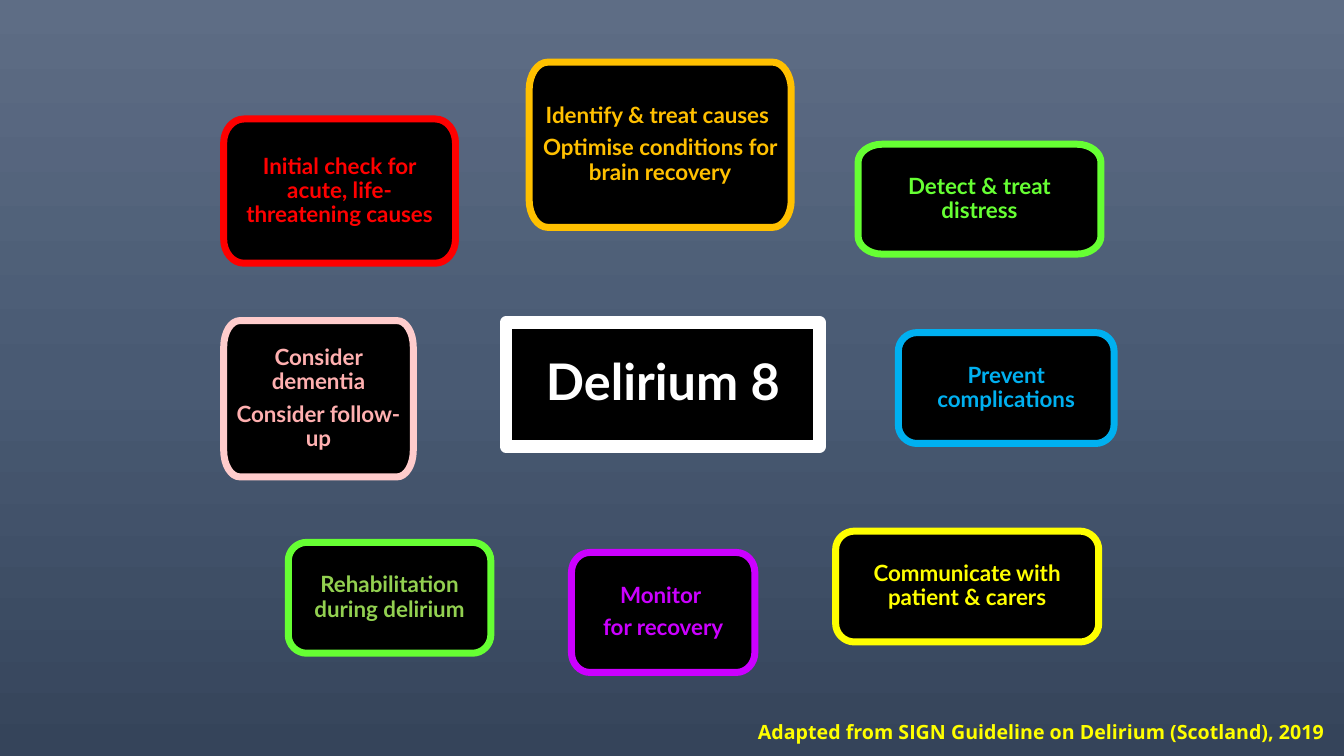
import copy
from dataclasses import dataclass

import lxml.etree
import pptx
import pptx.dml.color
import pptx.enum.text
import pptx.oxml.ns
import pptx.util

Pt = pptx.util.Pt
Align = pptx.enum.text.PP_ALIGN
Anchor = pptx.enum.text.MSO_ANCHOR
tag = pptx.oxml.ns.qn

ARC = 0.55

HUES = {
    "top": "5E6D85", "mid": "495A73", "base": "35445A",
    "black": "000000", "white": "FFFFFF", "red": "FF0000",
    "amber": "FFC000", "lime": "66FF33", "leaf": "92D050",
    "blue": "00B0F0", "violet": "CC00FF", "yellow": "FFFF00",
    "pink": "FFCCCC", "rose": "FFB0B0",
}


@dataclass(frozen=True)
class Box:
    left: float
    top: float
    width: float
    height: float
    bend_x: float
    bend_y: float
    edge: str
    ink: str
    lines: tuple[str, ...]
    size: float = 16
    weight: float = 5
    inset: float = 7.2


CORE = Box(361.5, 230.4, 223.9, 88.6, 22.3, 14.8, "white", "white",
           ("Delirium 8",), size=36, weight=9, inset=13)

STEPS = [
    Box(159.8, 85, 165.6, 103, 14.4, 17.2, "red", "red",
        ("Initial check for acute, life-threatening causes",)),
    Box(378, 44.4, 187.2, 118, 13.3, 19.6, "amber", "amber",
        ("Identify & treat causes ", "Optimise conditions for brain recovery")),
    Box(641.7, 237.6, 154.1, 79.2, 13.3, 13.3, "blue", "blue",
        ("Prevent complications",)),
    Box(612.9, 103, 173.5, 78.5, 17.2, 13, "lime", "lime",
        ("Detect & treat distress",), inset=8),
    Box(408.2, 394.6, 131, 85.7, 13.2, 14.3, "violet", "violet",
        ("Monitor ", "for recovery")),
    Box(205.9, 387.4, 144.7, 79.2, 13.2, 13.2, "lime", "leaf",
        ("Rehabilitation during delirium",)),
    Box(596.9, 379.4, 187.9, 79.2, 13.5, 13.2, "yellow", "yellow",
        ("Communicate with patient & carers",)),
    Box(159.8, 229, 135.4, 111.6, 11.5, 18.8, "pink", "rose",
        ("Consider dementia", "Consider follow-up")),
]


def shade(name: str) -> pptx.dml.color.RGBColor:
    return pptx.dml.color.RGBColor.from_string(HUES[name])


def write(frame, *lines: str, size: float = 16, ink: str = "white",
          font: str = "Lato", align=Align.CENTER, anchor=Anchor.MIDDLE,
          inset: float = 0, pitch: float = 0.9, gap: float = 5.6) -> None:
    frame.word_wrap = True
    frame.auto_size = pptx.enum.text.MSO_AUTO_SIZE.NONE
    frame.vertical_anchor = anchor
    frame.margin_left = frame.margin_right = Pt(inset)
    frame.margin_top = frame.margin_bottom = Pt(inset)
    for i, line in enumerate(lines):
        para = frame.add_paragraph() if i else frame.paragraphs[0]
        para.alignment = align
        para.line_spacing = pitch
        para.space_before = Pt(0)
        para.space_after = Pt(gap)
        run = para.add_run()
        run.text = line
        run.font.name = font
        run.font.size = Pt(size)
        run.font.bold = True
        run.font.color.rgb = shade(ink)


def outline(box: Box) -> list[tuple[float, float]]:
    wide, high, dx, dy = box.width, box.height, box.bend_x, box.bend_y
    return [(0, dy), (dx, 0), (wide - dx, 0), (wide, dy),
            (wide, high - dy), (wide - dx, high), (dx, high), (0, high - dy)]


def bend(shape, box: Box) -> None:
    spots = outline(box)
    tips = [(0, 0), (box.width, 0), (box.width, box.height), (0, box.height)]
    sides = list(shape.element.iter(tag("a:lnTo")))
    for i, tip in enumerate(tips):
        start, end = spots[2 * i:2 * i + 2]
        pulls = [tuple(a + ARC * (b - a) for a, b in zip(spot, tip))
                 for spot in (start, end)]
        curve = lxml.etree.Element(tag("a:cubicBezTo"))
        for x, y in (*pulls, end):
            lxml.etree.SubElement(curve, tag("a:pt"),
                                  x=str(Pt(x)), y=str(Pt(y)))
        side = sides[2 * i]
        side.getparent().replace(side, curve)


def draw(slide, box: Box):
    first, *rest = [(Pt(box.left + x), Pt(box.top + y))
                    for x, y in outline(box)]
    pen = slide.shapes.build_freeform(*first)
    pen.add_line_segments([*rest, first], close=True)
    shape = pen.convert_to_shape()
    bend(shape, box)
    shape.shadow.inherit = False
    shape.fill.solid()
    shape.fill.fore_color.rgb = shade("black")
    shape.line.color.rgb = shade(box.edge)
    shape.line.width = Pt(box.weight)
    return shape


def label(shape, box: Box) -> None:
    write(shape.text_frame, *box.lines, size=box.size, ink=box.ink,
          inset=box.inset)


def head(slide, box: Box) -> None:
    title = slide.shapes.title
    shape = draw(slide, box).element
    title.element.replace(title.element.spPr, shape.spPr)
    shape.getparent().remove(shape)
    label(title, box)


def paint(slide) -> None:
    fill = slide.background.fill
    fill.gradient()
    fill.gradient_angle = 270
    stops = next(slide.element.iter(tag("a:gsLst")))
    stops.insert(1, copy.deepcopy(stops[0]))
    for i, (stop, name) in enumerate(
            zip(fill.gradient_stops, ("top", "mid", "base"))):
        stop.position = i / 2
        stop.color.rgb = shade(name)


def main() -> None:
    deck = pptx.Presentation()
    deck.slide_width, deck.slide_height = Pt(960), Pt(540)
    slide = deck.slides.add_slide(deck.slide_layouts[5])
    paint(slide)
    head(slide, CORE)
    for step in STEPS:
        label(draw(slide, step), step)

    credit = slide.shapes.add_textbox(Pt(541.4), Pt(515.8), Pt(447.8), Pt(36))
    write(credit.text_frame,
          "Adapted from SIGN Guideline on Delirium (Scotland), 2019",
          size=14, ink="yellow", font="Open Sans", align=Align.LEFT,
          anchor=Anchor.TOP, pitch=0.93, gap=0)
    deck.save("out.pptx")


if __name__ == "__main__":
    main()
